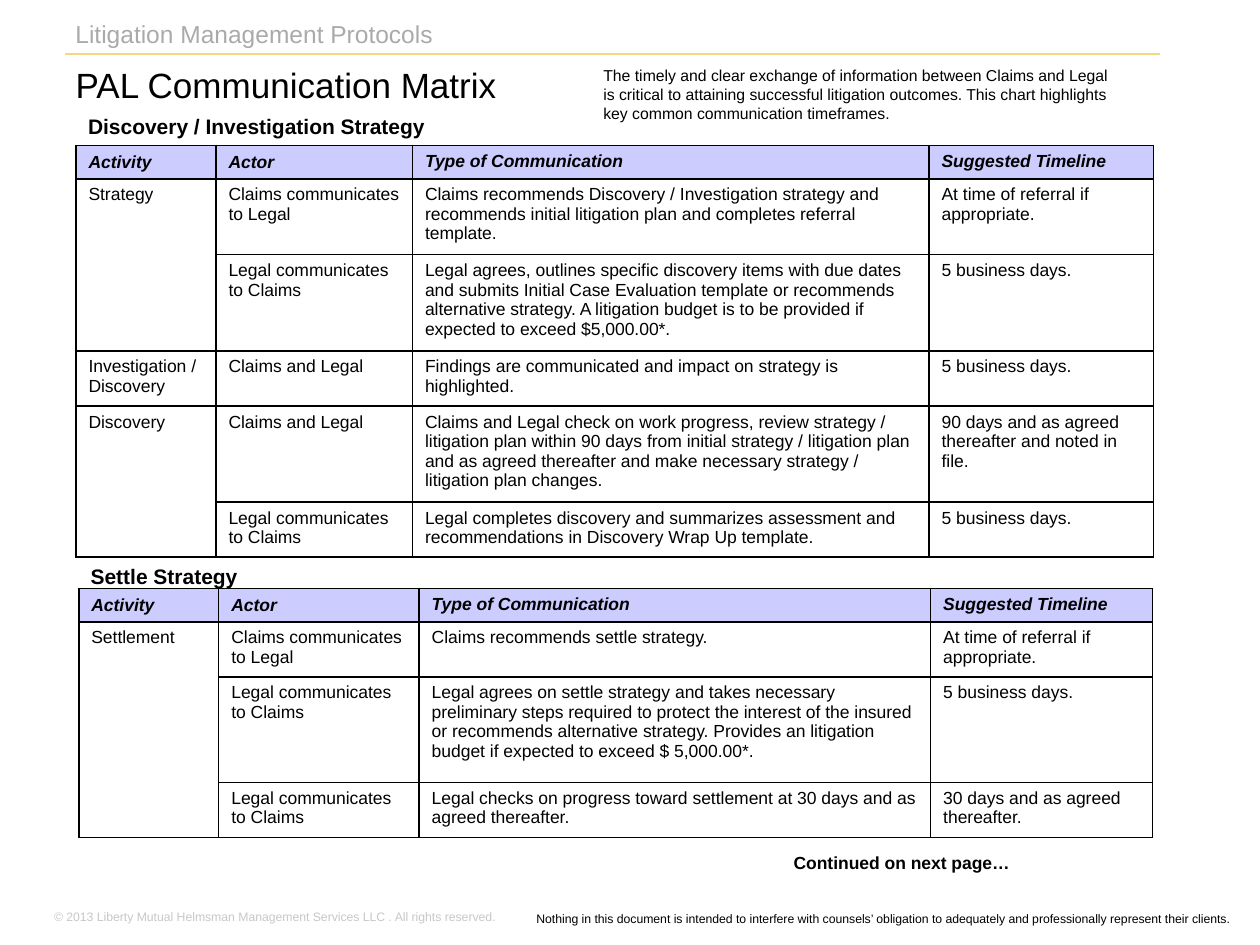
from lxml.etree import SubElement
from pptx import Presentation
from pptx.dml.color import RGBColor
from pptx.enum.shapes import MSO_CONNECTOR as CONN
from pptx.enum.text import MSO_ANCHOR as ANCHOR, PP_ALIGN as ALIGN
from pptx.oxml import parse_xml
from pptx.oxml.ns import nsdecls, qn
from pptx.util import Pt

HEADER = ["Activity", "Actor", "Type of Communication", "Suggested Timeline"]
TO_LEGAL = "Claims communicates to Legal"
TO_CLAIMS = "Legal communicates to Claims"
BOTH = "Claims and Legal"
FIVE = "5 business days."

DISCOVERY = [
    HEADER,
    ["Strategy", TO_LEGAL,
     "Claims recommends Discovery / Investigation strategy and recommends initial "
     "litigation plan and completes referral template.",
     "At time of referral if appropriate."],
    [None, TO_CLAIMS,
     "Legal agrees, outlines specific discovery items with due dates and submits Initial "
     "Case Evaluation template or recommends alternative strategy. A litigation budget is "
     "to be provided if expected to exceed $5,000.00*.", FIVE],
    ["Investigation / Discovery", BOTH,
     "Findings are communicated and impact on strategy is highlighted.", FIVE],
    ["Discovery", BOTH,
     "Claims and Legal check on work progress, review strategy / litigation plan within 90 "
     "days from initial strategy / litigation plan and as agreed thereafter and make "
     "necessary strategy / litigation plan changes.",
     "90 days and as agreed thereafter and noted in file."],
    [None, TO_CLAIMS,
     "Legal completes discovery and summarizes assessment and recommendations in Discovery "
     "Wrap Up template.", FIVE],
]
SETTLE = [
    HEADER,
    ["Settlement", TO_LEGAL, "Claims recommends settle strategy.",
     "At time of referral if appropriate."],
    [None, TO_CLAIMS,
     "Legal agrees on settle strategy and takes necessary preliminary steps required to "
     "protect the interest of the insured or recommends alternative strategy. Provides an "
     "litigation budget if expected to exceed $ 5,000.00*.", FIVE],
    [None, TO_CLAIMS,
     "Legal checks on progress toward settlement at 30 days and as agreed thereafter.",
     "30 days and as agreed thereafter."],
]
TABLES = [
    (DISCOVERY, 43.4, 83, [80, 112.3, 295.2, 128.2], [19.2, 43.2, 55.1, 31.5, 54.9, 31.6]),
    (SETTLE, 45, 336.2, [80, 114.5, 292.3, 126.7], [19.2, 31.4, 60.3, 31.4]),
]
TEXTS = [
    ("Litigation Management Protocols", (36, 0.7, 516, 36.7),
     dict(size=14, color="AAAAAA", anchor=ANCHOR.MIDDLE)),
    ("Nothing in this document is intended to interfere with counsels’ obligation to "
     "adequately and professionally represent their clients.", (216, 517, 493.9, 15.8),
     dict(size=7, align=ALIGN.RIGHT)),
    ("© 2013 Liberty Mutual Helmsman Management Services LLC . All rights reserved.",
     (23.8, 516.2, 499.7, 15.8), dict(size=7, color="C8C8C8")),
    ("Discovery / Investigation Strategy", (43.2, 61.2, 207.4, 21.6),
     dict(size=12, bold=True, anchor=ANCHOR.MIDDLE, wrap=False)),
    ("Settle Strategy", (44.7, 318.3, 98.6, 21.6),
     dict(size=12, bold=True, anchor=ANCHOR.MIDDLE, wrap=False)),
    ("Continued on next page…", (446.4, 483.1, 209.5, 19.4), dict(bold=True)),
    ("The timely and clear exchange of information between Claims and Legal is critical to "
     "attaining successful litigation outcomes. This chart highlights key common "
     "communication timeframes.", (337.7, 33.9, 308.9, 40.3),
     dict(size=9, anchor=ANCHOR.MIDDLE)),
]


def rgb(value):
    """Turn a hex string into a colour."""
    return RGBColor.from_string(value)


def write(tf, text, size=10, color="000000", bold=False, italic=False,
          align=ALIGN.LEFT, anchor=ANCHOR.TOP, wrap=True):
    """Put formatted text into a text frame."""
    tf.word_wrap = wrap
    tf.vertical_anchor = anchor
    p = tf.paragraphs[0]
    p.alignment = align
    r = p.add_run()
    r.text = text
    font = r.font
    font.name, font.size, font.bold, font.italic = "Arial", Pt(size), bold, italic
    font.color.rgb = rgb(color)


def place(sp, box):
    """Move and size a shape in points."""
    sp.left, sp.top, sp.width, sp.height = map(Pt, box)


def set_borders(cell, widths):
    """Draw the left, right, top and bottom cell borders."""
    tc_pr = cell._tc.get_or_add_tcPr()
    for i, (side, width) in enumerate(zip("LRTB", widths)):
        tc_pr.insert(i, parse_xml(
            f'<a:ln{side} {nsdecls("a")} w="{Pt(width)}"><a:solidFill>'
            f'<a:srgbClr val="000000"/></a:solidFill></a:ln{side}>'))


def add_matrix(s, rows, left, top, widths, heights):
    """Add one communication table."""
    table = s.shapes.add_table(len(rows), len(widths), Pt(left), Pt(top),
                               Pt(sum(widths)), Pt(sum(heights))).table
    table.first_row = table.horz_banding = False
    for col, width in zip(table.columns, widths):
        col.width = Pt(width)
    for row, height in zip(table.rows, heights):
        row.height = Pt(height)
    for i, row in enumerate(rows):
        head = i == 0
        for j, text in enumerate(row):
            cell = table.cell(i, j)
            if head:
                cell.fill.solid()
                cell.fill.fore_color.rgb = rgb("CCCCFF")
            else:
                cell.fill.background()
            set_borders(cell, (0.75 if j == 1 else 1, 0.75 if j == 0 else 1, 1, 1))
            if text:
                write(cell.text_frame, text, bold=head, italic=head)
                cell.vertical_anchor = ANCHOR.MIDDLE if head and j < 2 else ANCHOR.TOP
    starts = [i for i, row in enumerate(rows) if row[0]] + [len(rows)]
    for first, after in zip(starts, starts[1:]):
        if after - first > 1:
            table.cell(first, 0).merge(table.cell(after - 1, 0))


def main():
    """Build the slide and save it."""
    prs = Presentation()
    prs.slide_width, prs.slide_height = Pt(720), Pt(540)
    s = prs.slides.add_slide(prs.slide_layouts[5])
    rule = s.shapes.add_connector(CONN.STRAIGHT, Pt(37.4), Pt(30.8), Pt(663), Pt(30.8))
    rule.line.color.rgb = rgb("F4D87F")
    rule.line.width = Pt(0.75)
    SubElement(rule._element.spPr, qn("a:effectLst"))
    title = s.shapes.title
    place(title, (36, 30.2, 648, 33.8))
    write(title.text_frame, "PAL Communication Matrix", size=20, anchor=ANCHOR.BOTTOM)
    for matrix in TABLES:
        add_matrix(s, *matrix)
    for text, box, style in TEXTS:
        write(s.shapes.add_textbox(*map(Pt, box)).text_frame, text, **style)
    prs.save("out.pptx")


if __name__ == "__main__":
    main()
